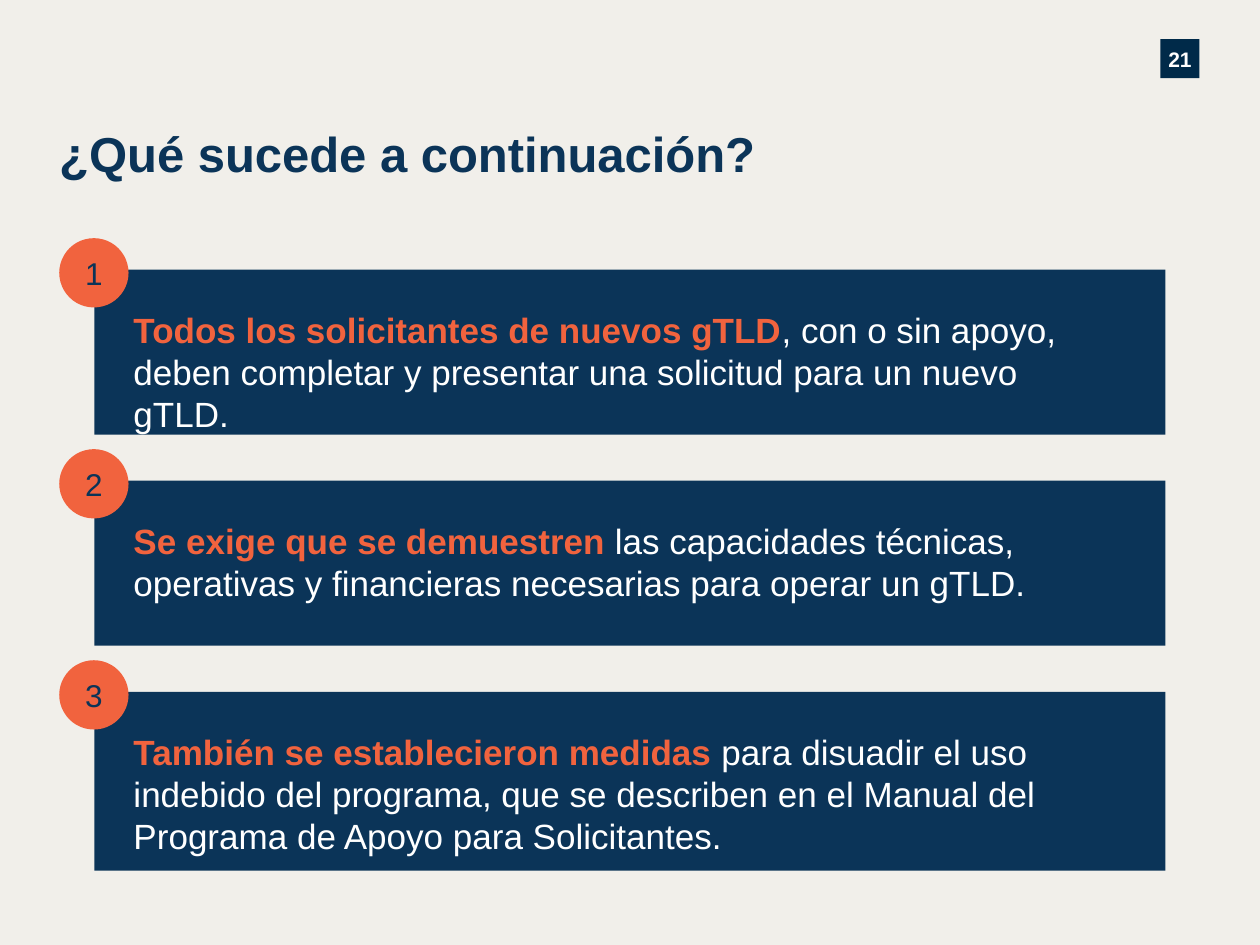
from pptx import Presentation
from pptx.dml.color import RGBColor
from pptx.enum.shapes import MSO_SHAPE
from pptx.enum.text import MSO_ANCHOR, MSO_AUTO_SIZE, PP_ALIGN
from pptx.util import Inches, Pt

NAVY = "0B3458"
DARK_NAVY = "002A49"
ORANGE = "F1633E"
WHITE = "FFFFFF"
CREAM = "F1EFEA"

FIRST_TOP = 2.14
STEP_PITCH = 1.675
BADGE_SIZE = 0.55
STEPS = [
    (1.31, "Todos los solicitantes de nuevos gTLD",
     ", con o sin apoyo, deben completar y presentar una solicitud para un nuevo gTLD."),
    (1.31, "Se exige que se demuestren ",
     "las capacidades técnicas, operativas y financieras necesarias para operar un gTLD."),
    (1.42, "También se establecieron medidas ",
     "para disuadir el uso indebido del programa, que se describen en el Manual del "
     "Programa de Apoyo para Solicitantes."),
]


def color(value):
    """Return the colour for a hex string."""
    return RGBColor.from_string(value)


def format_run(run, size, hex_color, bold=False):
    """Apply the slide's typeface to a run."""
    run.font.name = "Arial"
    run.font.size = Pt(size)
    run.font.bold = bold
    run.font.color.rgb = color(hex_color)


def set_frame(text_frame, margins, anchor, wrap=True):
    """Set the left, top, right and bottom margins, anchor and wrapping."""
    left, top, right, bottom = margins
    text_frame.margin_left, text_frame.margin_top = Inches(left), Inches(top)
    text_frame.margin_right, text_frame.margin_bottom = Inches(right), Inches(bottom)
    text_frame.vertical_anchor = anchor
    text_frame.auto_size = MSO_AUTO_SIZE.NONE
    text_frame.word_wrap = wrap


def add_block(slide, kind, left, top, width, height, fill):
    """Add a flat, borderless shape."""
    shape = slide.shapes.add_shape(
        kind, Inches(left), Inches(top), Inches(width), Inches(height))
    shape.shadow.inherit = False
    shape.fill.solid()
    shape.fill.fore_color.rgb = color(fill)
    shape.line.fill.background()
    return shape


def add_label(shape, text, size, hex_color, margins, bold=False):
    """Centre a short label in a shape."""
    set_frame(shape.text_frame, margins, MSO_ANCHOR.MIDDLE)
    paragraph = shape.text_frame.paragraphs[0]
    paragraph.text = text
    paragraph.alignment = PP_ALIGN.CENTER
    format_run(paragraph.runs[0], size, hex_color, bold)
    return paragraph


def add_page_number(slide, number):
    """Add the page number square."""
    square = add_block(slide, MSO_SHAPE.RECTANGLE, 9.21, 0.31, 0.31, 0.31, DARK_NAVY)
    paragraph = add_label(square, number, 12, WHITE, (0, 0, 0, 0), bold=True)
    paragraph.line_spacing = 1.08


def set_title(slide, text):
    """Place and format the title placeholder."""
    title = slide.shapes.title
    title.left, title.top = Inches(0.47), Inches(0.98)
    title.width, title.height = Inches(5.88), Inches(0.58)
    set_frame(title.text_frame, (0, 0, 0, 0), MSO_ANCHOR.TOP, wrap=False)
    paragraph = title.text_frame.paragraphs[0]
    paragraph.text = text
    paragraph.alignment = PP_ALIGN.LEFT
    format_run(paragraph.runs[0], 28, NAVY, bold=True)


def add_step(slide, number, top, height, lead, detail):
    """Add a text panel with its numbered badge."""
    panel = add_block(slide, MSO_SHAPE.RECTANGLE, 0.75, top, 8.5, height, NAVY)
    set_frame(panel.text_frame, (0.31, 0.31, 0.35, 0.31), MSO_ANCHOR.TOP)
    paragraph = panel.text_frame.paragraphs[0]
    paragraph.alignment = PP_ALIGN.LEFT
    for text, hex_color, bold in ((lead, ORANGE, True), (detail, WHITE, False)):
        run = paragraph.add_run()
        run.text = text
        format_run(run, 20, hex_color, bold)
    badge = add_block(slide, MSO_SHAPE.OVAL, 0.47, top - 0.25,
                      BADGE_SIZE, BADGE_SIZE, ORANGE)
    add_label(badge, str(number), 18, NAVY, (0.1, 0.05, 0.1, 0.05))


def main():
    """Build the slide and save it."""
    presentation = Presentation()
    presentation.slide_width, presentation.slide_height = Inches(10), Inches(7.5)
    slide = presentation.slides.add_slide(presentation.slide_layouts[5])
    slide.background.fill.solid()
    slide.background.fill.fore_color.rgb = color(CREAM)
    add_page_number(slide, "21")
    set_title(slide, "¿Qué sucede a continuación?")
    for index, (height, lead, detail) in enumerate(STEPS):
        add_step(slide, index + 1, FIRST_TOP + index * STEP_PITCH, height, lead, detail)
    presentation.save("out.pptx")


if __name__ == "__main__":
    main()
